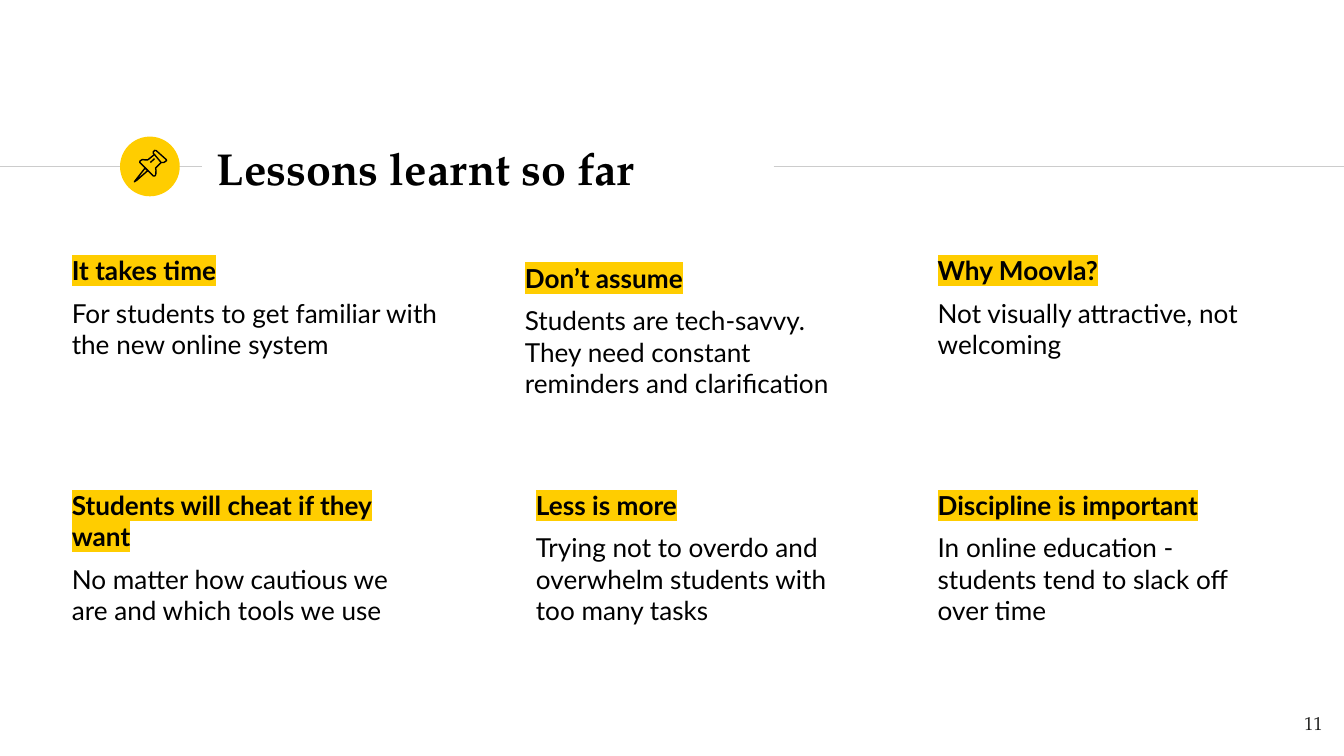
from lxml.etree import SubElement
from pptx import Presentation
from pptx.dml.color import RGBColor
from pptx.enum.shapes import MSO_CONNECTOR as Connector, MSO_SHAPE as Shape
from pptx.enum.text import MSO_ANCHOR as Anchor, MSO_AUTO_SIZE as AutoSize, PP_ALIGN as Align
from pptx.oxml.ns import qn
from pptx.util import Pt

COLORS = {"accent": "FFCD00", "rule": "CCCCCC", "text": "000000", "number": "1D1D1B"}
HEAD_FONT, BODY_FONT = "TeX Gyre Pagella", "Lato"


def set_frame(shape, anchor=Anchor.TOP):
    frame = shape.text_frame
    frame.auto_size = AutoSize.NONE
    settings = {"word_wrap": True, "vertical_anchor": anchor}
    settings.update({f"margin_{side}": Pt(7.2) for side in ("left", "top", "right", "bottom")})
    for name, value in settings.items():
        setattr(frame, name, value)
    return frame


def add_span(para, text, color="text", **settings):
    span = para.add_run()
    span.text = text
    span.font.color.rgb = RGBColor.from_string(COLORS[color])
    for name, value in settings.items():
        setattr(span.font, name, value)
    return span


deck = Presentation()
deck.slide_width, deck.slide_height = Pt(720), Pt(405)
page = deck.slides.add_slide(deck.slide_layouts[5])
shapes = page.shapes

# Rule on both sides of the title, with the badge on its left part
for start, end in ((0, 108), (414.5, 720)):
    rule = shapes.add_connector(Connector.STRAIGHT, Pt(start), Pt(89.2), Pt(end), Pt(89.2))
    rule.line.color.rgb = RGBColor.from_string(COLORS["rule"])
    rule.line.width = Pt(0.75)
    SubElement(rule._element.spPr, qn("a:effectLst"))

badge = shapes.add_shape(Shape.OVAL, Pt(64.3), Pt(73.2), Pt(32), Pt(32))
badge.shadow.inherit = False
badge.fill.solid()
badge.fill.fore_color.rgb = RGBColor.from_string(COLORS["accent"])
badge.line.fill.background()

# Pushpin outlines, in tenths of a point
needle = [(778, 900), (727, 965), (720, 974), (734, 965), (792, 914)]
cap = [(828, 828), (864, 871), (878, 871), (888, 864), (893, 860), (891, 855),
       (837, 807), (829, 806), (822, 813), (821, 821)]
body = [(828, 828), (792, 857), (778, 857), (763, 855), (751, 862), (749, 870),
        (822, 943), (829, 943), (835, 936), (836, 914), (834, 900), (864, 871)]
shine = [(806, 871), (828, 850)]
pin_parts = []
for points, closed in ((needle, True), (cap, True), (body, False), (shine, False)):
    builder = shapes.build_freeform(*points[0], scale=Pt(1) / 10)
    builder.add_line_segments(points[1:], close=closed)
    part = builder.convert_to_shape()
    part.shadow.inherit = False
    part.fill.background()
    part.line.color.rgb = RGBColor.from_string(COLORS["text"])
    part.line.width = Pt(0.75)
    pin_parts.append(part)
shapes.add_group_shape(pin_parts)

title = shapes.title
title.left, title.top, title.width, title.height = Pt(109), Pt(72.7), Pt(305.5), Pt(34.6)
para = set_frame(title, Anchor.MIDDLE).paragraphs[0]
para.alignment = Align.LEFT
add_span(para, "Lessons learnt so far", name=HEAD_FONT, size=Pt(24), bold=True)

# Left, top, width, height, heading, explanation
left_column, right_column = 31.4, 495.2
top_row, bottom_row = 129.1, 254.9
lessons = [
    (left_column, top_row, 232.6, 126, "It takes time",
     "For students to get familiar with the new online system"),
    (274.1, 133.2, 183.6, 95, "Don’t assume",
     "Students are tech-savvy. They need constant reminders and clarification"),
    (right_column, top_row, 183.6, 95, "Why Moovla?",
     "Not visually attractive, not welcoming"),
    (left_column, bottom_row, 203.8, 118.8, "Students will cheat if they want",
     "No matter how cautious we are and which tools we use"),
    (280, bottom_row, 183.6, 95, "Less is more",
     "Trying not to overdo and overwhelm students with too many tasks"),
    (right_column, bottom_row, 190.8, 95, "Discipline is important",
     "In online education - students tend to slack off over time"),
]
for *place, heading, explanation in lessons:
    box = shapes.add_textbox(*map(Pt, place))
    frame = set_frame(box)
    for para, text, is_heading in ((frame.paragraphs[0], heading, True),
                                   (frame.add_paragraph(), explanation, False)):
        para.space_before = Pt(6)
        span = add_span(para, text, name=BODY_FONT, size=Pt(14), bold=is_heading)
        if is_heading:
            props = span.font._element
            highlight = SubElement(props, qn("a:highlight"))
            SubElement(highlight, qn("a:srgbClr"), val=COLORS["accent"])
            props.find(qn("a:solidFill")).addnext(highlight)

number = shapes.add_textbox(Pt(672.5), Pt(374), Pt(43.2), Pt(31))
para = set_frame(number).paragraphs[0]
para.alignment = Align.RIGHT
add_span(para, "11", "number", name=HEAD_FONT, size=Pt(10))

deck.save("out.pptx")
